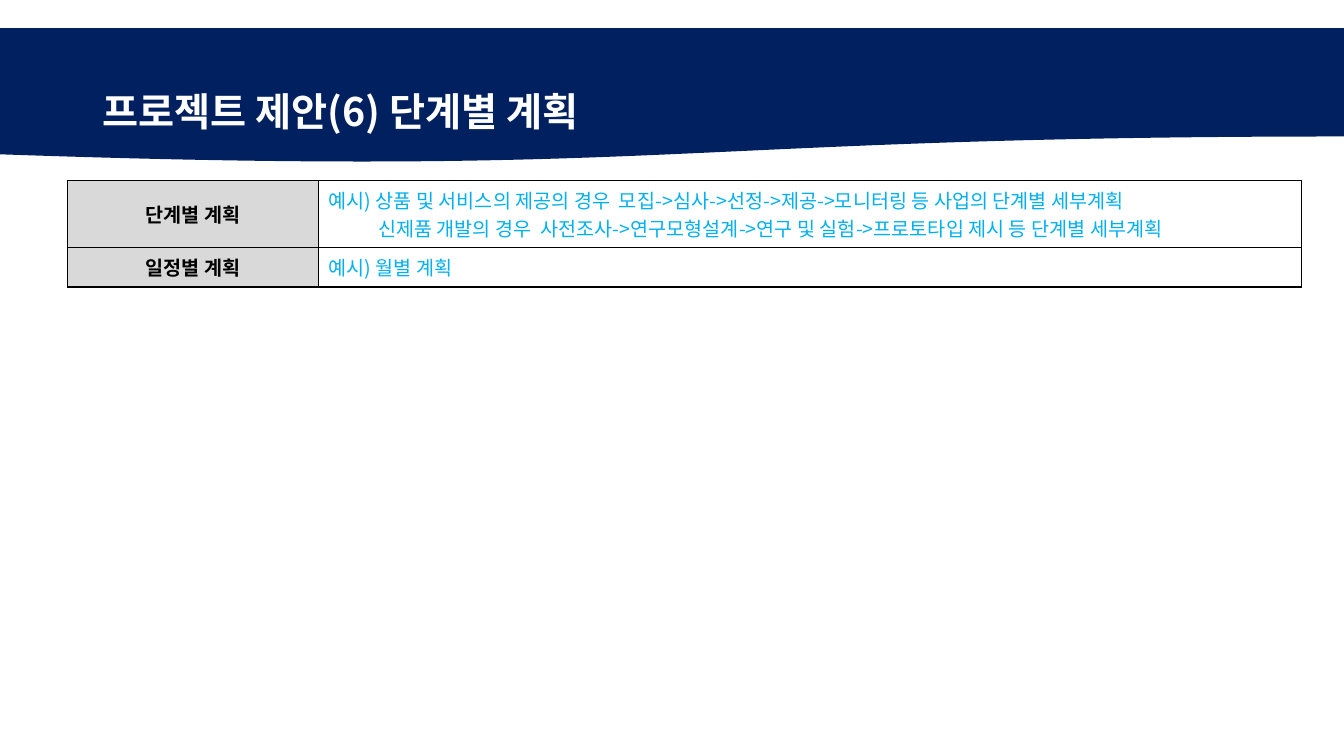
from dataclasses import dataclass

from lxml import etree
from pptx import Presentation
from pptx.dml.color import RGBColor
from pptx.enum.shapes import MSO_SHAPE
from pptx.enum.text import MSO_ANCHOR, MSO_AUTO_SIZE, PP_ALIGN
from pptx.oxml.ns import qn
from pptx.util import Inches, Pt

DOCUMENT = MSO_SHAPE.FLOWCHART_DOCUMENT
MIDDLE = MSO_ANCHOR.MIDDLE
NO_AUTOFIT = MSO_AUTO_SIZE.NONE
LEFT, CENTER = PP_ALIGN.LEFT, PP_ALIGN.CENTER

TITLE_ONLY = 5
FONT = "Noto Sans CJK KR"
NAVY, WHITE, BLACK = "002060", "FFFFFF", "000000"
LABEL_GRAY, EXAMPLE_BLUE = "D9D9D9", "00B0F0"
COLUMN_WIDTHS = (2.49, 9.75)


@dataclass
class Line:
    text: str
    indent: float = 0


@dataclass
class PlanRow:
    label: str
    examples: list[Line]
    height: float


PLAN_ROWS = [
    PlanRow("단계별 계획", [
        Line("예시) 상품 및 서비스의 제공의 경우  모집->심사->선정->제공->모니터링 등 사업의 단계별 세부계획"),
        Line("신제품 개발의 경우  사전조사->연구모형설계->연구 및 실험->프로토타입 제시 등 단계별 세부계획", 0.49),
    ], 0.66),
    PlanRow("일정별 계획", [Line("예시) 월별 계획")], 0.39),
]


def rgb(color: str) -> RGBColor:
    return RGBColor.from_string(color)


def write(paragraph, text: str, *, size: float = 14, color: str = BLACK,
          bold: bool = False, align=LEFT, indent: float = 0) -> None:
    paragraph.alignment = align
    if indent:
        properties = paragraph._p.get_or_add_pPr()
        properties.set("marL", str(Inches(indent)))
        properties.set("indent", "0")
    run = paragraph.add_run()
    run.text = text
    run.font.size = Pt(size)
    run.font.bold = bold
    run.font.color.rgb = rgb(color)
    run.font.name = FONT
    etree.SubElement(run._r.get_or_add_rPr(), qn("a:ea"), typeface=FONT)


def add_borders(cell, color: str = BLACK, width: float = 1) -> None:
    """Outline all four sides; borders must precede the fill in the cell XML."""
    properties = cell._tc.get_or_add_tcPr()
    for position, side in enumerate(("lnL", "lnR", "lnT", "lnB")):
        border = etree.Element(qn(f"a:{side}"), w=str(Pt(width)))
        fill = etree.SubElement(border, qn("a:solidFill"))
        etree.SubElement(fill, qn("a:srgbClr"), val=color)
        properties.insert(position, border)


def fill_cell(cell, lines: list[Line], fill: str, **text_format) -> None:
    cell.vertical_anchor = MIDDLE
    cell.fill.solid()
    cell.fill.fore_color.rgb = rgb(fill)
    add_borders(cell)
    frame = cell.text_frame
    for index, line in enumerate(lines):
        paragraph = frame.add_paragraph() if index else frame.paragraphs[0]
        write(paragraph, line.text, indent=line.indent, **text_format)


def add_header(slide) -> None:
    band = slide.shapes.add_shape(
        DOCUMENT, 0, Inches(0.28), Inches(13.33), Inches(1.34))
    band.shadow.inherit = False
    band.fill.solid()
    band.fill.fore_color.rgb = rgb(NAVY)
    band.line.fill.background()

    title = slide.shapes.title
    band._element.addnext(title._element)
    title.left, title.top = Inches(0.92), Inches(0.4)
    title.width, title.height = Inches(11.5), Inches(1.45)
    frame = title.text_frame
    frame.vertical_anchor = MIDDLE
    frame.auto_size = NO_AUTOFIT
    heading = frame.paragraphs[0]
    heading.line_spacing = 0.9
    write(heading, "프로젝트 제안(6) 단계별 계획", size=28, color=WHITE, bold=True)


def add_plan_table(slide) -> None:
    table = slide.shapes.add_table(
        len(PLAN_ROWS), len(COLUMN_WIDTHS), Inches(0.67), Inches(1.79),
        Inches(sum(COLUMN_WIDTHS)),
        Inches(sum(plan.height for plan in PLAN_ROWS))).table
    table.first_row = table.horz_banding = False
    for column, width in zip(table.columns, COLUMN_WIDTHS):
        column.width = Inches(width)
    for row, plan in zip(table.rows, PLAN_ROWS):
        row.height = Inches(plan.height)
        label, example = row.cells
        fill_cell(label, [Line(plan.label)], LABEL_GRAY, bold=True, align=CENTER)
        fill_cell(example, plan.examples, WHITE, color=EXAMPLE_BLUE)


def main() -> None:
    deck = Presentation()
    deck.slide_width, deck.slide_height = Inches(13.33), Inches(7.5)
    slide = deck.slides.add_slide(deck.slide_layouts[TITLE_ONLY])
    add_header(slide)
    add_plan_table(slide)
    deck.save("out.pptx")


if __name__ == "__main__":
    main()
